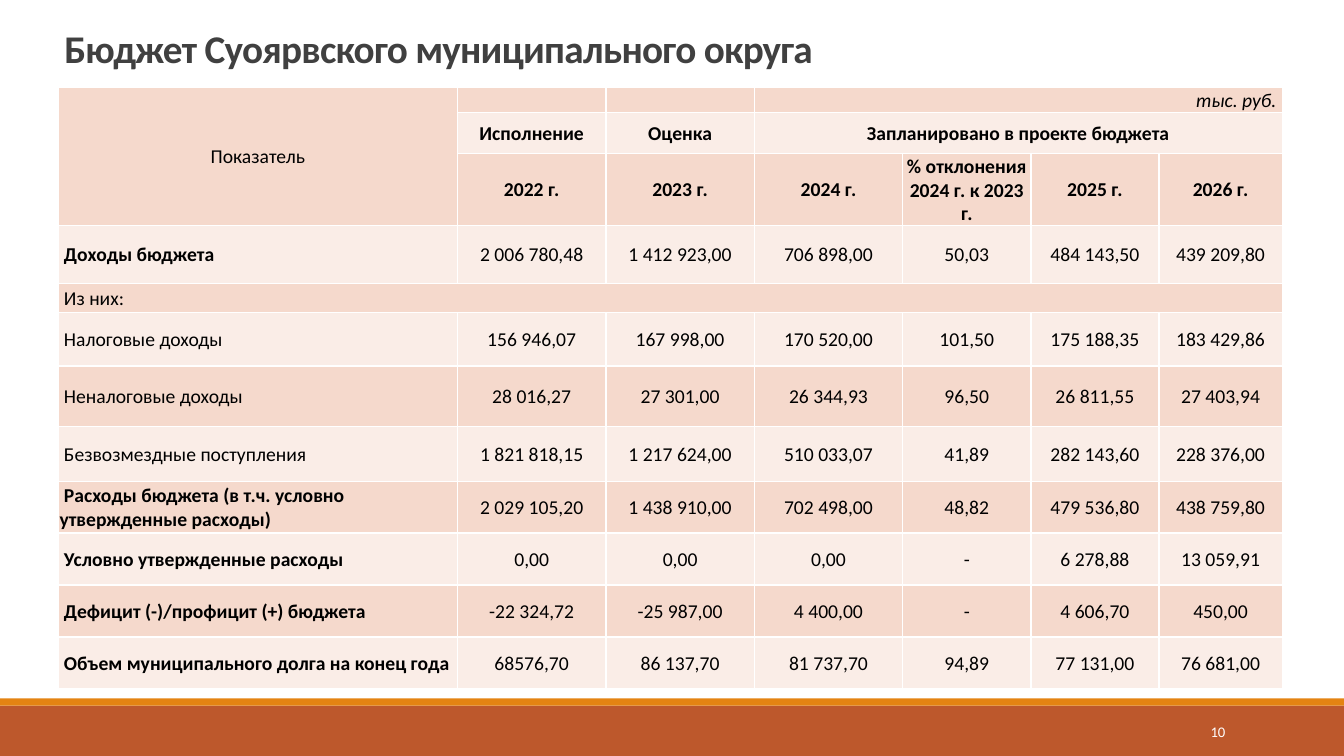
from lxml.etree import SubElement
from pptx import Presentation
from pptx.dml.color import RGBColor
from pptx.enum.shapes import MSO_SHAPE as Shape
from pptx.enum.text import MSO_ANCHOR as Anchor, MSO_AUTO_SIZE as AutoSize, PP_ALIGN as Align
from pptx.oxml.ns import qn
from pptx.util import Cm, Pt


def paint(fill, color):
    fill.solid()
    fill.fore_color.rgb = RGBColor.from_string(color)


def write(para, text, color="000000", align=Align.CENTER, **formats):
    para.alignment = align
    span = para.add_run()
    span.text = text
    paint(span.font.fill, color)
    for name, value in ({"name": "Calibri", "size": Pt(14)} | formats).items():
        setattr(span.font, name, value)
    return span


deck = Presentation()
deck.slide_width, deck.slide_height = Cm(33.87), Cm(19.05)
page = deck.slides.add_slide(deck.slide_layouts[5])

for top, height, color in [(17.78, 1.27, "BD582C"), (17.6, 0.18, "E48312")]:
    band = page.shapes.add_shape(Shape.RECTANGLE, 0, Cm(top), deck.slide_width, Cm(height))
    band.shadow.inherit = False
    band.line.fill.background()
    paint(band.fill, color)

number_box = page.shapes.add_textbox(Cm(27.5), Cm(17.93), Cm(3.63), Cm(1.02))
number_box.text_frame.word_wrap = True
number_box.text_frame.vertical_anchor = Anchor.MIDDLE
write(number_box.text_frame.paragraphs[0], "10", "FFFFFF", Align.RIGHT, size=Pt(10.5))

title = page.shapes.title
title.left, title.top, title.width, title.height = Cm(1.37), Cm(0.58), Cm(27.94), Cm(1.35)
title.text_frame.auto_size = AutoSize.NONE
title.text_frame.vertical_anchor = Anchor.BOTTOM
heading = title.text_frame.paragraphs[0]
heading.line_spacing = 0.85
span = write(heading, "Бюджет Суоярвского муниципального округа", "404040", Align.LEFT,
             size=Pt(28), bold=True)
span.font._element.set("spc", "-50")

widths = [10.06, 3.74, 3.74, 3.74, 3.23, 3.23, 3.1]
heights = [0.6, 1.03, 1.82, 1.46, 0.74, 1.34, 1.52, 1.39, 1.3, 1.31, 1.31, 1.31]
rows = [
    ["Показатель", "", "", "тыс. руб. "],
    ["", "Исполнение", "Оценка", "Запланировано в проекте бюджета"],
    ["", "2022 г.", "2023 г.", "2024 г.", "% отклонения 2024 г. к 2023 г.", "2025 г.", "2026 г."],
    [" Доходы бюджета", "2 006 780,48", "1 412 923,00", "706 898,00", "50,03", "484 143,50", "439 209,80"],
    [" Из них:"],
    [" Налоговые доходы", "156 946,07", "167 998,00", "170 520,00", "101,50", "175 188,35", "183 429,86"],
    [" Неналоговые доходы", "28 016,27", "27 301,00", "26 344,93", "96,50", "26 811,55", "27 403,94"],
    [" Безвозмездные поступления", "1 821 818,15", "1 217 624,00", "510 033,07", "41,89",
     "282 143,60", "228 376,00"],
    [" Расходы бюджета (в т.ч. условно утвержденные расходы)", "2 029 105,20", "1 438 910,00",
     "702 498,00", "48,82", "479 536,80", "438 759,80"],
    [" Условно утвержденные расходы", "0,00", "0,00", "0,00", "-", "6 278,88", "13 059,91"],
    [" Дефицит (-)/профицит (+) бюджета", "-22 324,72", "-25 987,00", "4 400,00", "-", "4 606,70", "450,00"],
    [" Объем муниципального долга на конец года", "68576,70", "86 137,70", "81 737,70", "94,89",
     "77 131,00", "76 681,00"],
]
header_rows = 3
bold_labels = {3, 8, 9, 10, 11}

table = page.shapes.add_table(len(rows), len(widths), Cm(1.47), Cm(2.21),
                              Cm(sum(widths)), Cm(sum(heights))).table
for column, width in zip(table.columns, widths):
    column.width = Cm(width)
for row, height in zip(table.rows, heights):
    row.height = Cm(height)

for r, texts in enumerate(rows):
    for c in range(len(widths)):
        cell = table.cell(r, c)
        text = texts[c] if c < len(texts) else ""
        unit = r == 0 and c == 3
        for name, value in {"margin_left": Cm(0.03), "margin_right": Cm(0.03),
                            "margin_top": Cm(0.03), "margin_bottom": 0,
                            "vertical_anchor": Anchor.BOTTOM if unit else Anchor.MIDDLE}.items():
            setattr(cell, name, value)
        para = cell.text_frame.paragraphs[0]
        if text:
            align = Align.RIGHT if unit else Align.LEFT if c == 0 and r >= header_rows else Align.CENTER
            bold = r in bold_labels if c == 0 else 0 < r < header_rows
            write(para, text, align=align, bold=bold, italic=unit)
        else:
            SubElement(para._p, qn("a:endParaRPr"), sz="1400")
        props = cell._tc.get_or_add_tcPr()
        for side in ["a:lnL", "a:lnR", "a:lnT", "a:lnB"]:
            border = SubElement(props, qn(side), w=str(Pt(1)))
            SubElement(SubElement(border, qn("a:solidFill")), qn("a:srgbClr"), val="FFFFFF")
        paint(cell.fill, "FAEDE7" if r % 2 else "F5D9CC")

for first, last in [((0, 0), (2, 0)), ((0, 3), (0, 6)), ((1, 3), (1, 6)), ((4, 0), (4, 6))]:
    table.cell(*first).merge(table.cell(*last))

deck.save("out.pptx")
